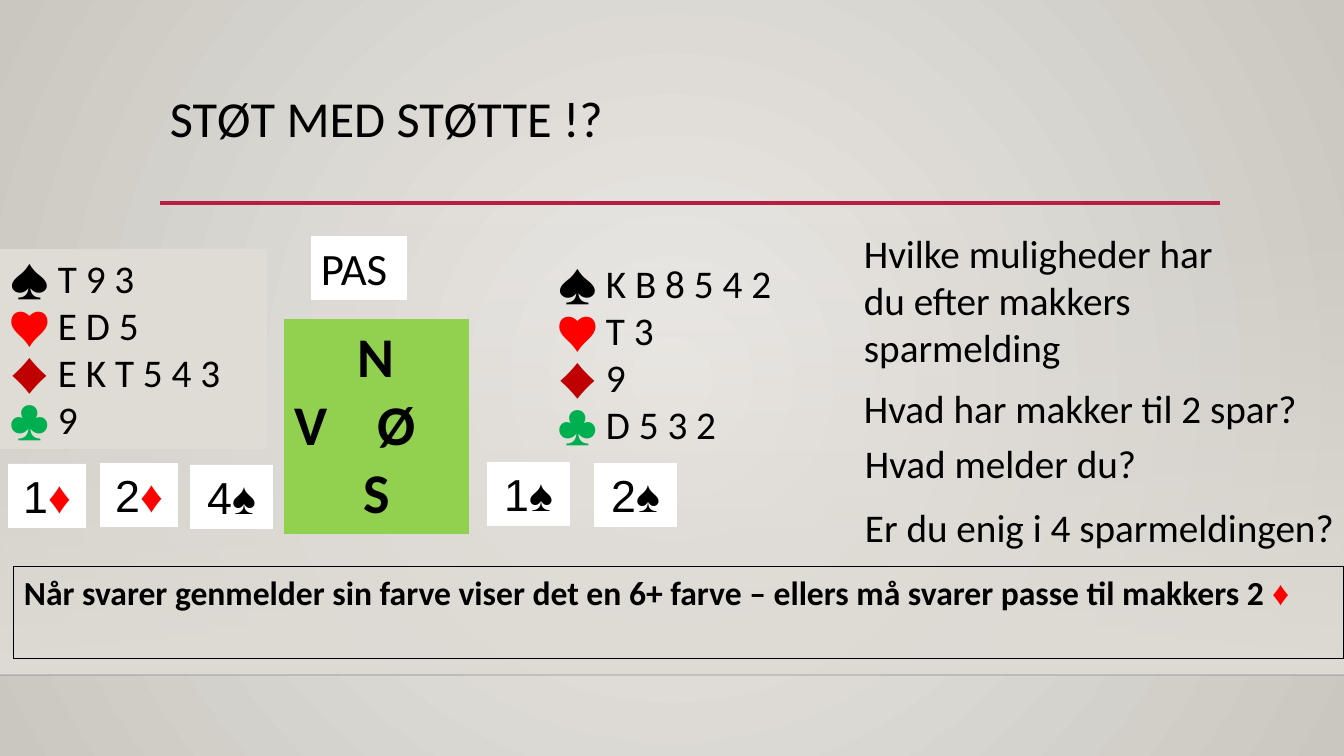
from lxml.etree import SubElement
from pptx import Presentation
from pptx.dml.color import RGBColor
from pptx.enum.shapes import MSO_CONNECTOR, MSO_SHAPE
from pptx.enum.text import PP_ALIGN as Align
from pptx.oxml import parse_xml
from pptx.oxml.ns import nsdecls, qn
from pptx.util import Pt

EMU_PER_PX = 914400 / 100.8
COLORS = {
    "black": "000000",
    "white": "FFFFFF",
    "heart": "FF0000",
    "diamond": "C00000",
    "club": "00B050",
    "table": "92D050",
    "band": "DFDBD5",
    "band_edge": "000001",
    "rule": "B71E42",
    "glow": "ECEAE7",
    "rim": "CAC7C1",
}
SUITS = [("♠︎", "black"), ("♥︎", "heart"), ("♦︎", "diamond"), ("♣︎", "club")]
NO_GRID_STYLE = "{2D5ABB26-0587-4C30-8999-92F81FD0307C}"


def px(*lengths):
    return [round(length * EMU_PER_PX) for length in lengths]


def rgb(color):
    return RGBColor.from_string(COLORS[color])


def set_alpha(parent, percent):
    color = next(parent.iter(qn("a:srgbClr")))
    SubElement(color, qn("a:alpha")).set("val", str(percent * 1000))


def set_gradient(fill, owner, colors, direction):
    """Two-stop gradient on owner; direction is the a:lin or a:path element."""
    fill.gradient()
    for stop, color in zip(fill.gradient_stops, colors):
        stop.color.rgb = rgb(color)
    gradient = next(owner.iter(qn("a:gradFill")))
    gradient.replace(gradient.find(qn("a:lin")), parse_xml(direction))
    return gradient


def write_lines(frame, lines, size, font="Calibri", bold=False, align=None):
    """Each line is a list of (text, color) runs."""
    frame.word_wrap = True
    for number, runs in enumerate(lines):
        paragraph = frame.paragraphs[0] if number == 0 else frame.add_paragraph()
        paragraph.alignment = align
        paragraph.font.name = font
        paragraph.font.size = Pt(size)
        paragraph.font.bold = bold
        if len(runs) == 1:
            paragraph.font.color.rgb = rgb(runs[0][1])
        for text, color in runs:
            run = paragraph.add_run()
            run.text = text
            if len(runs) > 1:
                run.font.color.rgb = rgb(color)


def add_text(slide, box, lines, size, fill=None, **style):
    text_box = slide.shapes.add_textbox(*px(*box))
    if fill:
        text_box.fill.solid()
        text_box.fill.fore_color.rgb = rgb(fill)
    write_lines(text_box.text_frame, lines, size, **style)
    return text_box


def add_line(slide, left, right, y, color, width):
    line = slide.shapes.add_connector(MSO_CONNECTOR.STRAIGHT, *px(left, y, right, y))
    line.line.color.rgb = rgb(color)
    line.line.width = Pt(width)
    SubElement(line._element.spPr, qn("a:effectLst"))
    return line


def add_backdrop(slide):
    set_gradient(
        slide.background.fill, slide._element, ["glow", "rim"],
        f'<a:path {nsdecls("a")} path="circle">'
        '<a:fillToRect l="50000" t="50000" r="50000" b="50000"/></a:path>')
    band = slide.shapes.add_shape(MSO_SHAPE.RECTANGLE, *px(0, 223, 1344, 452))
    band.shadow.inherit = False
    band.line.fill.background()
    gradient = set_gradient(
        band.fill, band._element, ["band", "band"],
        f'<a:lin {nsdecls("a")} ang="5400000" scaled="0"/>')
    set_alpha(gradient, 0)
    edge = add_line(slide, 0, 1344, 675, "band_edge", 1)
    set_alpha(edge._element.spPr, 20)
    add_line(slide, 160, 1220, 203, "rule", 2.5)


def add_compass(slide):
    widths, heights = (211, 185, 277), (102, 215, 120)
    frame = slide.shapes.add_table(3, 3, *px(73, 217, sum(widths), sum(heights)))
    table = frame.table
    table.first_row = table.horz_banding = False
    table._tbl.tblPr.find(qn("a:tableStyleId")).text = NO_GRID_STYLE
    for column, width in zip(table.columns, px(*widths)):
        column.width = width
    for row, height in zip(table.rows, px(*heights)):
        row.height = height
    for cell in table.iter_cells():
        cell.fill.background()

    compass = table.cell(1, 1)
    compass.fill.solid()
    compass.fill.fore_color.rgb = rgb("table")
    lines = [[(text, "black")] for text in ("N", "V\tØ", "S")]
    write_lines(compass.text_frame, lines, 40, bold=True, align=Align.CENTER)
    west_east = compass.text_frame.paragraphs[1]
    west_east.alignment = Align.LEFT
    east_stop = px(83)[0]
    west_east._p.get_or_add_pPr().insert(0, parse_xml(
        f'<a:tabLst {nsdecls("a")}><a:tab pos="{east_stop}" algn="l"/></a:tabLst>'))


def add_hand(slide, box, holdings, fill=None):
    lines = [[suit, (f" {cards}", "black")] for suit, cards in zip(SUITS, holdings)]
    add_text(slide, box, lines, 28, fill)


def add_bid(slide, left, top, width, runs):
    add_text(slide, (left, top, width, 64), [runs], 32, "white",
             font="Arial", align=Align.CENTER)


def add_conclusion(slide):
    conclusion = add_text(slide, (14, 567, 1330, 92), [[
        ("Når svarer genmelder sin farve viser det en 6+ farve – "
         "ellers må svarer passe til makkers 2 ", "black"),
        ("♦︎", "heart")]], 24, bold=True)
    conclusion.line.color.rgb = rgb("black")
    conclusion.line.width = Pt(0.75)
    diamond = conclusion.text_frame.paragraphs[0].runs[-1]
    diamond.font.name = "Arial"
    diamond.font.bold = False


def main():
    deck = Presentation()
    deck.slide_width, deck.slide_height = px(1344, 756)
    slide = deck.slides.add_slide(deck.slide_layouts[6])

    add_backdrop(slide)
    add_compass(slide)
    title = add_text(slide, (160, 89, 1058, 116), [[("STØT MED STØTTE !?", "black")]], 36)
    title.text_frame.paragraphs[0].line_spacing = 0.9

    add_hand(slide, (0, 249, 267, 200), ["T 9 3", "E D 5", "E K T 5 4 3", "9"], "band")
    add_hand(slide, (548, 254, 247, 200), ["K B 8 5 4 2", "T 3", "9", "D 5 3 2"])

    add_conclusion(slide)

    add_text(slide, (311, 236, 96, 64), [[("PAS", "black")]], 32, "white")
    for left, top, level in ((8, 464, "1"), (100, 463, "2")):
        add_bid(slide, left, top, 78, [(level, "black"), ("♦︎", "heart")])
    for left, top, bid in ((190, 465, "4♠︎"), (487, 462, "1♠︎"), (594, 463, "2♠︎")):
        add_bid(slide, left, top, 83, [(bid, "black")])

    for left, top, width, height, question in (
        (854, 224, 383, 152, "Hvilke muligheder har du efter makkers sparmelding"),
        (854, 379, 490, 57, "Hvad har makker til 2 spar?"),
        (855, 434, 490, 57, "Hvad melder du?"),
        (855, 498, 490, 57, "Er du enig i 4 sparmeldingen?"),
    ):
        add_text(slide, (left, top, width, height), [[(question, "black")]], 28)

    deck.save("out.pptx")


if __name__ == "__main__":
    main()
